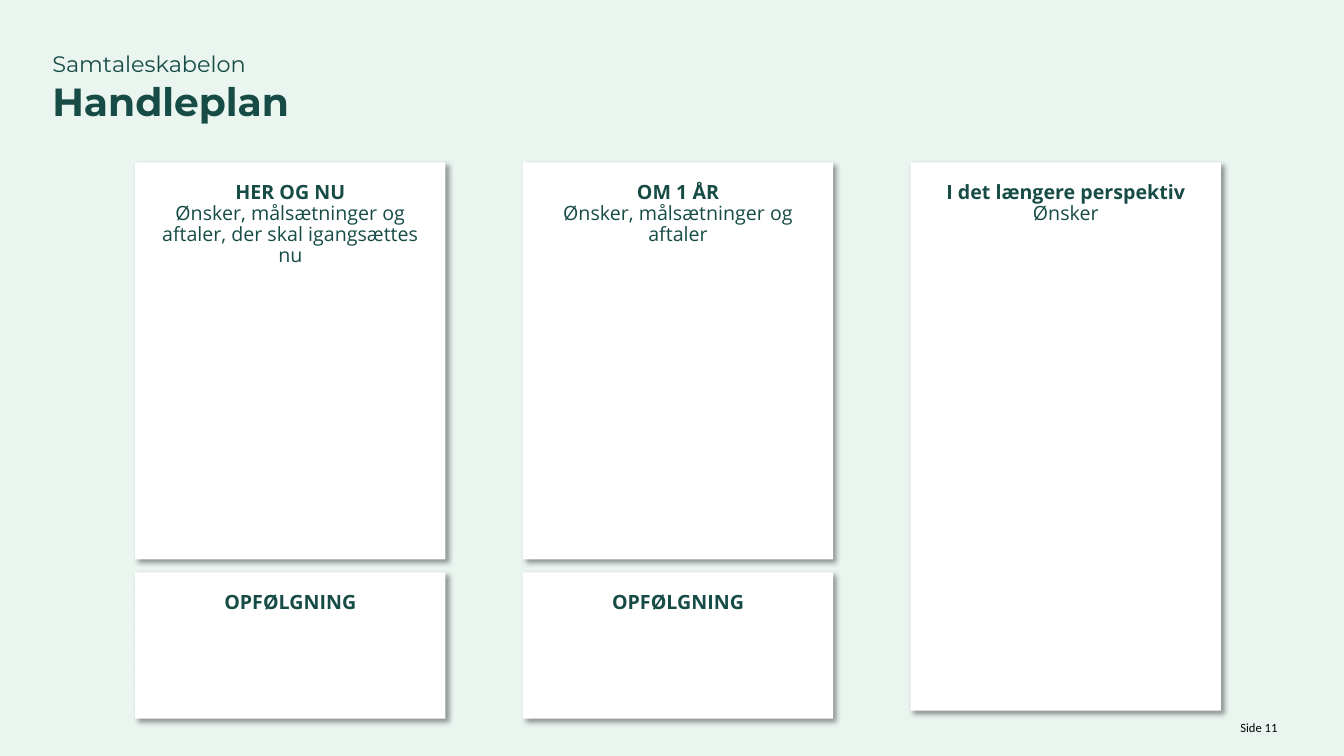
"""Build the Handleplan conversation template slide."""
from dataclasses import dataclass

from lxml.etree import SubElement
from pptx import Presentation
from pptx.dml.color import RGBColor
from pptx.enum.shapes import MSO_SHAPE
from pptx.enum.text import MSO_ANCHOR, PP_ALIGN
from pptx.oxml.ns import qn
from pptx.util import Inches, Pt


@dataclass(frozen=True)
class TextStyle:
    name: str
    size: float
    color: str
    bold: bool = False


@dataclass(frozen=True)
class Theme:
    background: str = "EBF5F0"
    card: str = "FFFFFF"
    shadow: str = "000000"
    kicker: TextStyle = TextStyle("Montserrat", 16, "164B46")
    title: TextStyle = TextStyle("Montserrat", 28, "164B46", True)
    heading: TextStyle = TextStyle("Open Sans", 14, "164B46", True)
    body: TextStyle = TextStyle("Open Sans", 14, "164B46")
    page: TextStyle = TextStyle("Calibri", 9, "000000")


@dataclass(frozen=True)
class Area:
    """Position and size in percent of the slide."""
    left: float
    top: float
    width: float
    height: float


@dataclass(frozen=True)
class Row:
    top: float
    height: float


@dataclass(frozen=True)
class Card:
    column: int
    row: Row
    heading: str
    body: str = ""


THEME = Theme()
SLIDE_WIDTH, SLIDE_HEIGHT = Inches(13.33), Inches(7.5)
COLUMN_COUNT, COLUMN_WIDTH = 3, 23.1
GRID_LEFT, GRID_RIGHT = 10.05, 90.85
COLUMN_PITCH = (GRID_RIGHT - GRID_LEFT - COLUMN_WIDTH) / (COLUMN_COUNT - 1)
PLAN_ROW = Row(21.47, 52.53)
FOLLOW_UP_ROW = Row(75.73, 19.33)
LONG_TERM_ROW = Row(21.47, 72.53)
TITLE_AREA = Area(3.9, 6.67, 60.6, 12.93)
PAGE_AREA = Area(82.45, 95.2, 12.6, 2.13)
CARD_PADDING = Inches(0.2)

CARDS = [
    Card(0, PLAN_ROW, "HER OG NU", "Ønsker, målsætninger og aftaler, der skal igangsættes nu"),
    Card(0, FOLLOW_UP_ROW, "OPFØLGNING"),
    Card(1, PLAN_ROW, "OM 1 ÅR", "Ønsker, målsætninger og aftaler"),
    Card(1, FOLLOW_UP_ROW, "OPFØLGNING"),
    Card(2, LONG_TERM_ROW, "I det længere perspektiv", "Ønsker"),
]


def place(area: Area) -> tuple[int, int, int, int]:
    """Turn percentages into slide lengths."""
    return (int(SLIDE_WIDTH * area.left / 100), int(SLIDE_HEIGHT * area.top / 100),
            int(SLIDE_WIDTH * area.width / 100), int(SLIDE_HEIGHT * area.height / 100))


def apply_format(target, values: dict) -> None:
    """Set each named attribute on the target."""
    for name, value in values.items():
        setattr(target, name, value)


def format_frame(text_frame, padding: int = 0) -> None:
    """Give a text frame equal insets, wrapping and top anchoring."""
    apply_format(text_frame, {
        "margin_left": padding, "margin_top": padding,
        "margin_right": padding, "margin_bottom": padding,
        "word_wrap": True, "vertical_anchor": MSO_ANCHOR.TOP,
    })


def add_text(paragraph, text: str, style: TextStyle) -> None:
    """Append a styled run to a paragraph."""
    run = paragraph.add_run()
    run.text = text
    apply_format(run.font, {"name": style.name, "size": Pt(style.size), "bold": style.bold})
    run.font.color.rgb = RGBColor.from_string(style.color)


def add_shadow(shape) -> None:
    """Cast a soft shadow to the lower right."""
    shape.shadow.inherit = False
    effects = shape.element.spPr.find(qn("a:effectLst"))
    shadow = SubElement(effects, qn("a:outerShdw"), blurRad=str(Pt(4)), dist=str(Pt(3)),
                        dir="2700000", algn="tl", rotWithShape="0")
    color = SubElement(shadow, qn("a:srgbClr"), val=THEME.shadow)
    SubElement(color, qn("a:alpha"), val="40000")


def add_card(slide, card: Card) -> None:
    """Draw a white card with its heading and optional body."""
    left = GRID_LEFT + card.column * COLUMN_PITCH
    area = Area(left, card.row.top, COLUMN_WIDTH, card.row.height)
    shape = slide.shapes.add_shape(MSO_SHAPE.RECTANGLE, *place(area))
    shape.fill.solid()
    shape.fill.fore_color.rgb = RGBColor.from_string(THEME.card)
    shape.line.fill.background()
    add_shadow(shape)
    text_frame = shape.text_frame
    format_frame(text_frame, CARD_PADDING)
    add_text(text_frame.paragraphs[0], card.heading, THEME.heading)
    if card.body:
        add_text(text_frame.add_paragraph(), card.body, THEME.body)
    for paragraph in text_frame.paragraphs:
        apply_format(paragraph, {"alignment": PP_ALIGN.CENTER, "line_spacing": 0.9})


def add_text_box(slide, area: Area, alignment: PP_ALIGN):
    """Add a text box and return its first paragraph."""
    text_frame = slide.shapes.add_textbox(*place(area)).text_frame
    format_frame(text_frame)
    paragraph = text_frame.paragraphs[0]
    paragraph.alignment = alignment
    return paragraph


def main() -> None:
    """Build and save the slide."""
    presentation = Presentation()
    apply_format(presentation, {"slide_width": SLIDE_WIDTH, "slide_height": SLIDE_HEIGHT})
    slide = presentation.slides.add_slide(presentation.slide_layouts[6])
    slide.background.fill.solid()
    slide.background.fill.fore_color.rgb = RGBColor.from_string(THEME.background)

    title = add_text_box(slide, TITLE_AREA, PP_ALIGN.LEFT)
    add_text(title, "Samtaleskabelon", THEME.kicker)
    title.add_line_break()
    add_text(title, "Handleplan", THEME.title)
    for card in CARDS:
        add_card(slide, card)
    add_text(add_text_box(slide, PAGE_AREA, PP_ALIGN.RIGHT), "Side 11", THEME.page)
    presentation.save("out.pptx")


if __name__ == "__main__":
    main()
